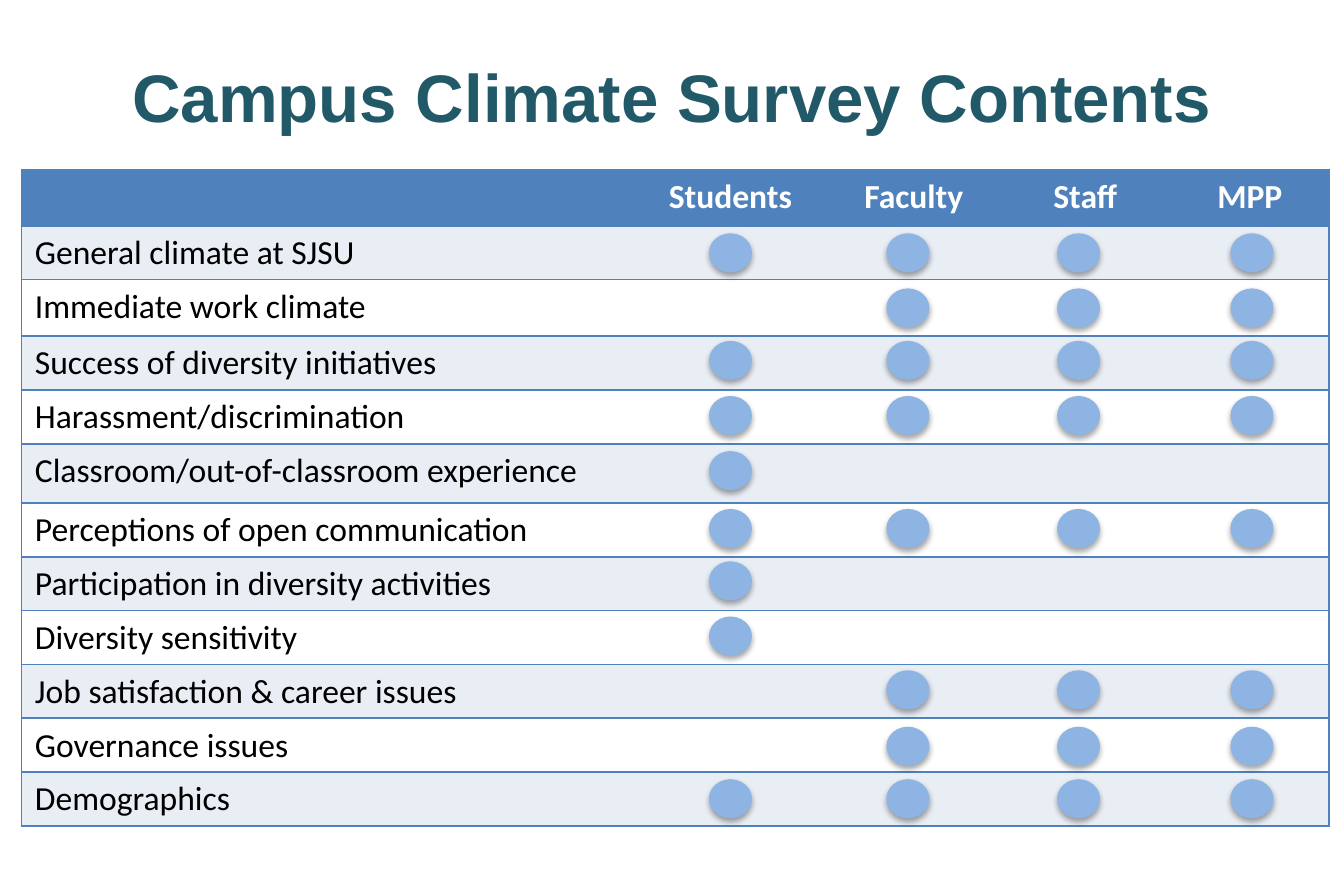
from dataclasses import dataclass

from lxml import etree
from pptx import Presentation
from pptx import util as u
from pptx.dml.color import RGBColor
from pptx.enum import shapes, text
from pptx.oxml.ns import qn


@dataclass(frozen=True)
class Theme:
    title: str = "215968"
    accent: str = "4F81BD"
    band: str = "E9EDF4"
    white: str = "FFFFFF"
    black: str = "000000"
    dot: str = "8EB4E3"
    title_font: str = "Arial"
    table_font: str = "Calibri"
    title_size: int = 36
    table_size: int = 18


THEME = Theme()

GROUPS = ["Students", "Faculty", "Staff", "MPP"]
ALL_GROUPS = set(GROUPS)
EMPLOYEES = ALL_GROUPS - {"Students"}
STUDENTS = {"Students"}

# Topic, row height, top of its dots, groups surveyed
TOPICS = [
    ("General climate at SJSU", 0.39, 1.74, ALL_GROUPS),
    ("Immediate work climate", 0.42, 2.15, EMPLOYEES),
    ("Success of diversity initiatives", 0.39, 2.54, ALL_GROUPS),
    ("Harassment/discrimination", 0.39, 2.95, ALL_GROUPS),
    ("Classroom/out-of-classroom experience", 0.44, 3.36, STUDENTS),
    ("Perceptions of open communication", 0.39, 3.79, ALL_GROUPS),
    ("Participation in diversity activities", 0.39, 4.18, STUDENTS),
    ("Diversity sensitivity", 0.39, 4.59, STUDENTS),
    ("Job satisfaction & career issues", 0.39, 4.99, EMPLOYEES),
    ("Governance issues", 0.39, 5.41, EMPLOYEES),
    ("Demographics", 0.39, 5.8, ALL_GROUPS),
]
HEADER_HEIGHT = 0.42
COLUMN_WIDTHS = [4.55, 1.45, 1.28, 1.27, 1.18]
DOT_LEFTS = dict(zip(GROUPS, [5.28, 6.6, 7.87, 9.16]))
DOT_WIDTH, DOT_HEIGHT = 0.31, 0.28


def add_run(paragraph, words, font, size, color, bold=False):
    run = paragraph.add_run()
    run.text = words
    run.font.name = font
    run.font.size = u.Pt(size)
    run.font.bold = bold
    run.font.color.rgb = RGBColor.from_string(color)


def add_title(slide, words):
    box = slide.shapes.add_textbox(u.Inches(0.5), u.Inches(0.17), u.Inches(9), u.Inches(1.08))
    frame = box.text_frame
    frame.word_wrap = True
    frame.vertical_anchor = text.MSO_ANCHOR.MIDDLE
    paragraph = frame.paragraphs[0]
    paragraph.alignment = text.PP_ALIGN.CENTER
    add_run(paragraph, words, THEME.title_font, THEME.title_size, THEME.title, bold=True)


def add_color(parent, color):
    fill = etree.SubElement(parent, qn("a:solidFill"))
    return etree.SubElement(fill, qn("a:srgbClr"), val=color)


def set_borders(cell, visible):
    """Draw the sides named in visible and clear the others."""
    properties = cell._tc.get_or_add_tcPr()
    for index, side in enumerate("LRTB"):
        line = etree.Element(qn(f"a:ln{side}"), w=str(u.Pt(1)))
        if side in visible:
            add_color(line, THEME.accent)
        else:
            etree.SubElement(line, qn("a:noFill"))
        properties.insert(index, line)


def fill_cell(cell, words, fill, color, centered=False, bold=False):
    cell.fill.solid()
    cell.fill.fore_color.rgb = RGBColor.from_string(fill)
    paragraph = cell.text_frame.paragraphs[0]
    paragraph.font.size = u.Pt(THEME.table_size)
    if centered:
        paragraph.alignment = text.PP_ALIGN.CENTER
    if words:
        add_run(paragraph, words, THEME.table_font, THEME.table_size, color, bold)


def add_topic_table(slide):
    heights = [HEADER_HEIGHT] + [height for _, height, _, _ in TOPICS]
    frame = slide.shapes.add_table(
        len(heights), len(COLUMN_WIDTHS), u.Inches(0.16), u.Inches(1.26),
        u.Inches(sum(COLUMN_WIDTHS)), u.Inches(sum(heights)))
    table = frame.table
    table.first_row = table.horz_banding = False
    for column, width in zip(table.columns, COLUMN_WIDTHS):
        column.width = u.Inches(width)
    for row, height in zip(table.rows, heights):
        row.height = u.Inches(height)

    # Header row
    for cell, words in zip(table.rows[0].cells, [""] + GROUPS):
        fill_cell(cell, words, THEME.accent, THEME.white, centered=True, bold=True)

    # Topic rows in alternating bands
    for number, (topic, _, _, _) in enumerate(TOPICS, start=1):
        fill = THEME.band if number % 2 else THEME.white
        for column in range(len(COLUMN_WIDTHS)):
            fill_cell(table.cell(number, column), "" if column else topic, fill, THEME.black)

    # Rules between rows and an outer frame
    last = len(COLUMN_WIDTHS) - 1
    for row in table.rows:
        for column, cell in enumerate(row.cells):
            set_borders(cell, "TB" + {0: "L", last: "R"}.get(column, ""))


def add_soft_shadow(shape):
    effects = etree.SubElement(shape._element.spPr, qn("a:effectLst"))
    shadow = etree.SubElement(
        effects, qn("a:outerShdw"), blurRad=str(u.Pt(3.1)), dist=str(u.Pt(1.8)),
        dir="5400000", rotWithShape="0")
    etree.SubElement(add_shadow_color(shadow), qn("a:alpha"), val="35000")


def add_shadow_color(shadow):
    return etree.SubElement(shadow, qn("a:srgbClr"), val=THEME.black)


def add_dot(slide, left, top):
    dot = slide.shapes.add_shape(
        shapes.MSO_SHAPE.OVAL, u.Inches(left), u.Inches(top),
        u.Inches(DOT_WIDTH), u.Inches(DOT_HEIGHT))
    color = RGBColor.from_string(THEME.dot)
    dot.fill.solid()
    dot.fill.fore_color.rgb = color
    dot.line.color.rgb = color
    dot.line.width = u.Pt(0.75)
    add_soft_shadow(dot)


def main():
    presentation = Presentation()
    presentation.slide_width = u.Inches(10)
    presentation.slide_height = u.Inches(6.5)
    slide = presentation.slides.add_slide(presentation.slide_layouts[6])

    add_title(slide, "Campus Climate Survey Contents")
    add_topic_table(slide)

    # One dot for each group that is asked about a topic
    for _, _, top, surveyed in TOPICS:
        for group in GROUPS:
            if group in surveyed:
                add_dot(slide, DOT_LEFTS[group], top)

    presentation.save("out.pptx")


if __name__ == "__main__":
    main()
